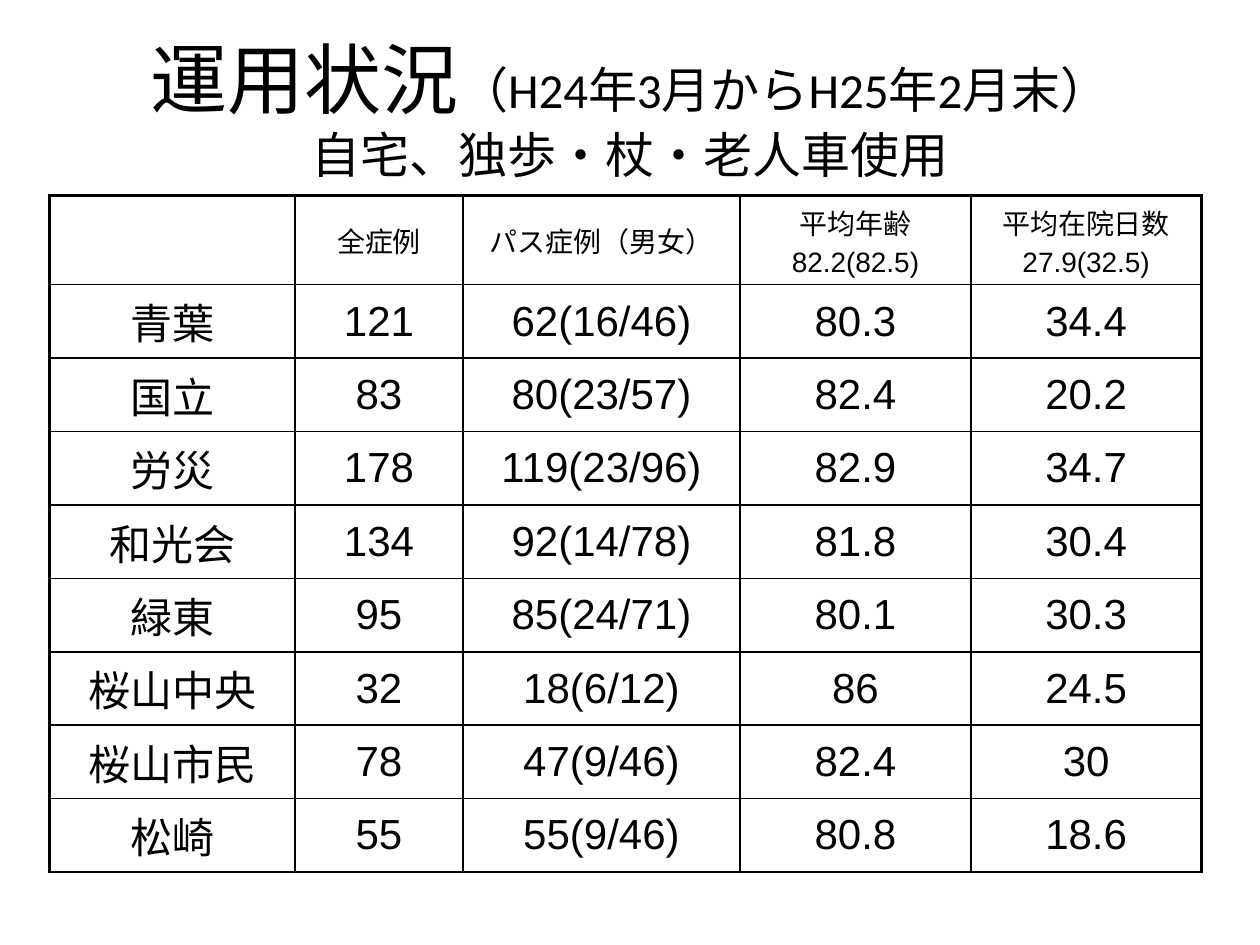
from lxml.etree import SubElement
from pptx import Presentation
from pptx.dml.color import RGBColor
from pptx.enum.text import MSO_ANCHOR, PP_ALIGN
from pptx.oxml.ns import qn
from pptx.util import Cm, Pt

BLACK = RGBColor(0, 0, 0)
THIN, THICK = Pt(1), Pt(2.25)

COLUMN_WIDTHS = [4.95, 3.38, 5.59, 4.65, 4.65]
HEADER_HEIGHT, HOSPITAL_HEIGHT = 1.8, 1.48
ROWS = [
    ["", "全症例", "パス症例（男女）", "平均年齢\n82.2(82.5)", "平均在院日数\n27.9(32.5)"],
    ["青葉", "121", "62(16/46)", "80.3", "34.4"],
    ["国立", "83", "80(23/57)", "82.4", "20.2"],
    ["労災", "178", "119(23/96)", "82.9", "34.7"],
    ["和光会", "134", "92(14/78)", "81.8", "30.4"],
    ["緑東", "95", "85(24/71)", "80.1", "30.3"],
    ["桜山中央", "32", "18(6/12)", "86", "24.5"],
    ["桜山市民", "78", "47(9/46)", "82.4", "30"],
    ["松崎", "55", "55(9/46)", "80.8", "18.6"],
]


def add_run(paragraph, text, size, font_name):
    run = paragraph.add_run()
    run.text = text
    run.font.size = Pt(size)
    run.font.name = font_name
    run.font.color.rgb = BLACK


def set_border(cell, side, width):
    """Draw one cell edge; side is L, R, T or B, set in that order."""
    line = SubElement(cell._tc.get_or_add_tcPr(), qn(f"a:ln{side}"), w=str(width))
    fill = SubElement(line, qn("a:solidFill"))
    SubElement(fill, qn("a:srgbClr"), val=str(BLACK))


prs = Presentation()
prs.slide_width, prs.slide_height = Cm(25.4), Cm(19.05)
slide = prs.slides.add_slide(prs.slide_layouts[6])

# Title with the period and the patient group
title = slide.shapes.add_textbox(Cm(1.27), Cm(0.58), Cm(22.86), Cm(3.18)).text_frame
title.word_wrap = True
title.vertical_anchor = MSO_ANCHOR.MIDDLE
heading = title.paragraphs[0]
heading.alignment = PP_ALIGN.CENTER
add_run(heading, "運用状況", 44, "Calibri")
add_run(heading, "（H24年3月からH25年2月末）", 28, "Calibri")
heading.add_line_break()
add_run(heading, "自宅、独歩・杖・老人車使用", 28, "Calibri")

# Results by hospital
row_heights = [HEADER_HEIGHT] + [HOSPITAL_HEIGHT] * (len(ROWS) - 1)
results = slide.shapes.add_table(
    len(ROWS), len(COLUMN_WIDTHS), Cm(1), Cm(3.94),
    Cm(sum(COLUMN_WIDTHS)), Cm(sum(row_heights)),
).table
for column, width in zip(results.columns, COLUMN_WIDTHS):
    column.width = Cm(width)
for row, height in zip(results.rows, row_heights):
    row.height = Cm(height)

last_column = len(COLUMN_WIDTHS) - 1
for r, values in enumerate(ROWS):
    size = 16 if r == 0 else 24
    for c, value in enumerate(values):
        cell = results.cell(r, c)
        set_border(cell, "L", THICK if c == 0 else THIN)
        set_border(cell, "R", THICK if c == last_column else THIN)
        set_border(cell, "T", THICK if r == 0 else THIN)
        set_border(cell, "B", THIN)
        cell.fill.background()
        cell.vertical_anchor = MSO_ANCHOR.MIDDLE
        if not value:
            continue
        for i, text in enumerate(value.split("\n")):
            frame = cell.text_frame
            paragraph = frame.add_paragraph() if i else frame.paragraphs[0]
            paragraph.alignment = PP_ALIGN.CENTER
            paragraph.space_before = Pt(size * 0.2)
            add_run(paragraph, text, size, "Arial")

prs.save("out.pptx")
